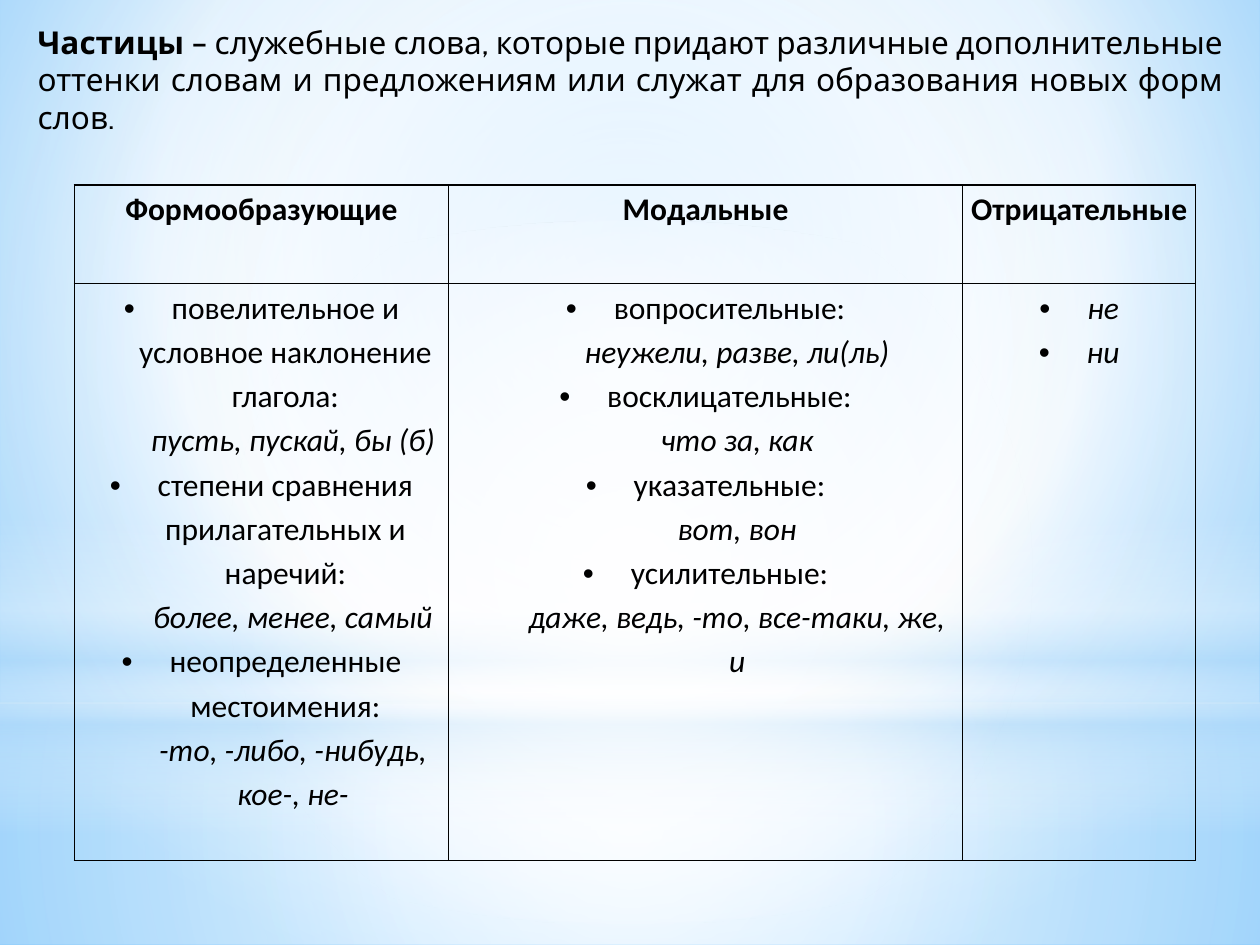
from lxml import etree
from pptx import Presentation
from pptx.dml.color import RGBColor
from pptx.enum import shapes, text
from pptx.oxml.ns import qn
from pptx.util import Inches, Pt

BLACK = "000000"
WHITE = "FFFFFF"
PALE_BLUE = "B4DCFA"
CENTRE = (50, 50, 50, 50)

BACKGROUND_STOPS = [(0, "9ED5FF", 100), (60, WHITE, 100), (100, "5BB9FF", 100)]
GLOWS = [
    ("RECTANGLE", (0, 5.58, 10, 1.92), CENTRE,
     [(0, WHITE, 91), (37, WHITE, 76), (100, PALE_BLUE, 79)]),
    ("RECTANGLE", (0, 0, 10, 5.58), CENTRE,
     [(0, WHITE, 89), (48, WHITE, 62), (100, PALE_BLUE, 79)]),
    ("RECTANGLE", (0, 4.12, 10, 2.5), None,
     [(0, WHITE, 0), (29, WHITE, 30), (45, PALE_BLUE, 40),
      (55, WHITE, 26), (65, PALE_BLUE, 60), (100, WHITE, 0)]),
    ("OVAL", (0, 1.75, 10, 5.58), CENTRE, [(0, WHITE, 100), (56, WHITE, 0)]),
]

TERM = "Частицы"
DEFINITION = (" – служебные слова, которые придают различные дополнительные оттенки "
              "словам и предложениям или служат для образования новых форм слов.")

COLUMNS = [
    ("Формообразующие", 2.97, [
        ("bullet", "повелительное и условное наклонение глагола:"),
        ("example", "пусть, пускай, бы (б)"),
        ("bullet", "степени сравнения прилагательных и наречий:"),
        ("example", "более, менее, самый"),
        ("bullet", "неопределенные местоимения:"),
        ("example", "-то, -либо, -нибудь, кое-, не-"),
    ]),
    ("Модальные", 4.08, [
        ("bullet", "вопросительные:"),
        ("example", "неужели, разве, ли(ль)"),
        ("bullet", "восклицательные:"),
        ("example", "что за, как"),
        ("bullet", "указательные:"),
        ("example", "вот, вон"),
        ("bullet", "усилительные:"),
        ("example", "даже, ведь, -то, все-таки, же, и"),
    ]),
    ("Отрицательные", 1.85, [
        ("bullet example", "не"),
        ("bullet example", "ни"),
    ]),
]
ROW_HEIGHTS = (0.78, 4.58)


def add_xml(parent, tag, **attributes):
    return etree.SubElement(parent, qn(tag), {k: str(v) for k, v in attributes.items()})


def add_colour(parent, colour):
    return add_xml(parent, "a:srgbClr", val=colour)


def set_gradient(fill, owner, stops, focus):
    fill.gradient()
    gradient = next(owner.iter(qn("a:gradFill")))
    for child in list(gradient):
        gradient.remove(child)
    stop_list = add_xml(gradient, "a:gsLst")
    for position, colour, opacity in stops:
        stop = add_xml(stop_list, "a:gs", pos=position * 1000)
        add_xml(add_colour(stop, colour), "a:alpha", val=opacity * 1000)
    if focus:
        circle = add_xml(gradient, "a:path", path="circle")
        add_xml(circle, "a:fillToRect", **{side: value * 1000 for side, value in zip("ltrb", focus)})
    else:
        add_xml(gradient, "a:lin", ang=90 * 60000, scaled=0)


def format_run(run, font_name, bold=False, italic=False):
    font = run.font
    font.name, font.size, font.bold, font.italic = font_name, Pt(18), bold, italic
    font.color.rgb = RGBColor.from_string(BLACK)


def add_glow(slide, kind, box, focus, stops):
    shape = slide.shapes.add_shape(shapes.MSO_SHAPE[kind], *map(Inches, box))
    shape.shadow.inherit = False
    shape.line.fill.background()
    set_gradient(shape.fill, shape._element.spPr, stops, focus)


def add_definition(slide):
    box = slide.shapes.add_textbox(*map(Inches, (0.2, 0.13, 9.61, 1.01)))
    box.text_frame.word_wrap = True
    box.text_frame.auto_size = text.MSO_AUTO_SIZE.SHAPE_TO_FIT_TEXT
    paragraph = box.text_frame.paragraphs[0]
    paragraph.alignment = text.PP_ALIGN.JUSTIFY
    for wording, bold in ((TERM, True), (DEFINITION, False)):
        run = paragraph.add_run()
        run.text = wording
        format_run(run, "Cabin", bold)


def format_cell(cell):
    cell.margin_left = cell.margin_right = Inches(0.06)
    cell.margin_top = cell.margin_bottom = 0
    properties = cell._tc.get_or_add_tcPr()
    for side in "LRTB":
        border = add_xml(properties, f"a:ln{side}", w=Pt(1))
        add_colour(add_xml(border, "a:solidFill"), BLACK)
    cell.fill.background()


def fill_cell(cell, entries):
    format_cell(cell)
    cell.text_frame.text = "\n".join(wording for _, wording in entries)
    for paragraph, (role, _) in zip(cell.text_frame.paragraphs, entries):
        paragraph.alignment = text.PP_ALIGN.CENTER
        paragraph.line_spacing = 1.15
        format_run(paragraph.runs[0], "Calibri", role == "heading", "example" in role)
        properties = paragraph._p.get_or_add_pPr()
        if "bullet" in role:
            properties.set("marL", str(Inches(0.38)))
            properties.set("indent", str(Inches(-0.38)))
            add_xml(properties, "a:buFont", typeface="Arial")
            add_xml(properties, "a:buChar", char="•")
        elif role == "example":
            properties.set("marL", str(Inches(0.5)))


def add_particle_table(slide):
    widths = [width for _, width, _ in COLUMNS]
    box = (0.59, 1.47, sum(widths), sum(ROW_HEIGHTS))
    table = slide.shapes.add_table(len(ROW_HEIGHTS), len(COLUMNS), *map(Inches, box)).table
    table.first_row = table.horz_banding = False
    for row, height in zip(table.rows, ROW_HEIGHTS):
        row.height = Inches(height)
    for index, (heading, width, entries) in enumerate(COLUMNS):
        table.columns[index].width = Inches(width)
        fill_cell(table.cell(0, index), [("heading", heading)])
        fill_cell(table.cell(1, index), entries)


def main():
    presentation = Presentation()
    presentation.slide_width, presentation.slide_height = Inches(10), Inches(7.5)
    slide = presentation.slides.add_slide(presentation.slide_layouts[6])
    set_gradient(slide.background.fill, slide._element, BACKGROUND_STOPS, (20, 10, 20, 60))
    for glow in GLOWS:
        add_glow(slide, *glow)
    add_definition(slide)
    add_particle_table(slide)
    presentation.save("out.pptx")


if __name__ == "__main__":
    main()
